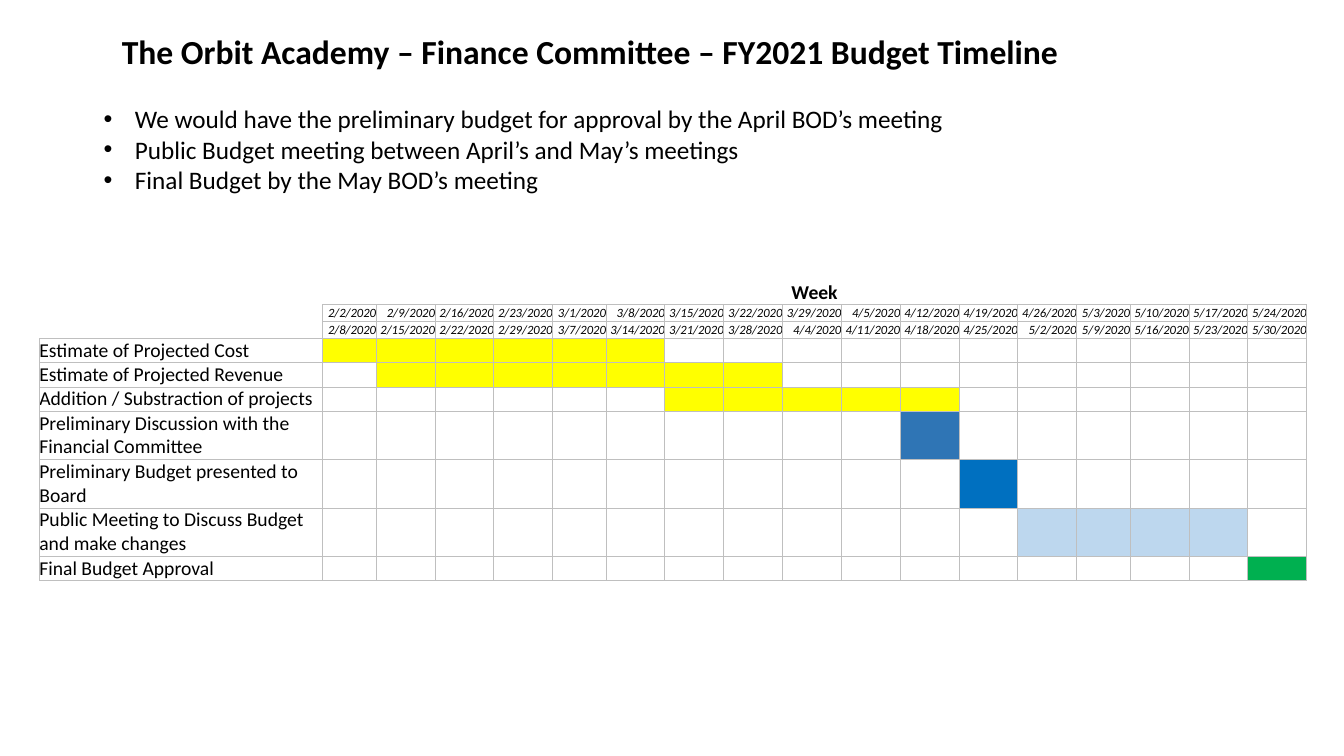
from dataclasses import dataclass

from lxml.etree import SubElement
from pptx import Presentation
from pptx.dml.color import RGBColor
from pptx.enum.text import MSO_ANCHOR, PP_ALIGN
from pptx.oxml.ns import qn
from pptx.util import Inches, Pt

TITLE = "The Orbit Academy – Finance Committee – FY2021 Budget Timeline"
BULLETS = [
    "We would have the preliminary budget for approval by the April BOD’s meeting",
    "Public Budget meeting between April’s and May’s meetings",
    "Final Budget by the May BOD’s meeting",
]
YEAR = 2020
WEEK_STARTS = ("2/2 2/9 2/16 2/23 3/1 3/8 3/15 3/22 3/29 "
               "4/5 4/12 4/19 4/26 5/3 5/10 5/17 5/24").split()
WEEK_ENDS = ("2/8 2/15 2/22 2/29 3/7 3/14 3/21 3/28 4/4 "
             "4/11 4/18 4/25 5/2 5/9 5/16 5/23 5/30").split()
# Task, first week, last week, bar colour, lines of text
TASKS = [
    ("Estimate of Projected Cost", 1, 6, "FFFF00", 1),
    ("Estimate of Projected Revenue", 2, 8, "FFFF00", 1),
    ("Addition / Substraction of projects", 7, 11, "FFFF00", 1),
    ("Preliminary Discussion with the Financial Committee", 11, 11, "2F75B5", 2),
    ("Preliminary Budget presented to Board", 12, 12, "0070C0", 2),
    ("Public Meeting to Discuss Budget and make changes", 13, 16, "BDD7EE", 2),
    ("Final Budget Approval", 17, 17, "00B050", 1),
]


@dataclass(frozen=True)
class Theme:
    font: str = "Calibri"
    text: str = "000000"
    grid: str = "BFBFBF"
    title_size: int = 24
    bullet_size: int = 18
    label_size: int = 14
    date_size: int = 9


THEME = Theme()
SLIDE_WIDTH, SLIDE_HEIGHT = 13.33, 7.5
TABLE_LEFT, TABLE_TOP, TABLE_WIDTH = 0.39, 2.78, 12.57
LABEL_WIDTH, NARROW_WIDTH = 2.81, 0.53
NARROW_WEEKS = (1, 5, 14)
LINE_HEIGHT, DATE_HEIGHT = 0.24, 0.17
HEADER_ROWS = 3
ALL_SIDES = ("L", "R", "T", "B")


def style_paragraph(paragraph, size, bold=False, italic=False):
    font = paragraph.font
    font.name, font.size = THEME.font, Pt(size)
    font.bold, font.italic = bold, italic
    font.color.rgb = RGBColor.from_string(THEME.text)


def add_text(slide, left, top, width, height, lines, size, bold=False, wrap=True):
    box = slide.shapes.add_textbox(Inches(left), Inches(top), Inches(width), Inches(height))
    frame = box.text_frame
    frame.word_wrap = wrap
    frame.text = "\n".join(lines)
    for paragraph in frame.paragraphs:
        style_paragraph(paragraph, size, bold)
    return frame


def add_bullet(paragraph):
    properties = paragraph._p.get_or_add_pPr()
    indent = Inches(0.31)
    properties.set("marL", str(indent))
    properties.set("indent", str(-indent))
    font = properties.makeelement(qn("a:buFont"), {"typeface": "Arial"})
    character = properties.makeelement(qn("a:buChar"), {"char": "•"})
    properties.insert(0, font)
    properties.insert(1, character)


def draw_borders(cell, sides):
    """Line the given sides; the borders must precede the cell's fill."""
    properties = cell._tc.get_or_add_tcPr()
    for side in ALL_SIDES:
        line = SubElement(properties, qn(f"a:ln{side}"), w=str(Pt(0.5)))
        if side in sides:
            fill = SubElement(line, qn("a:solidFill"))
            SubElement(fill, qn("a:srgbClr"), val=THEME.grid)
        else:
            SubElement(line, qn("a:noFill"))


def border_sides(row, column):
    if row == 0:
        return ("B",) if column else ()
    if column == 0 and row < HEADER_ROWS:
        return ("R", "B") if row == HEADER_ROWS - 1 else ("R",)
    return ALL_SIDES


def fill_cell(cell, row, column, text, color):
    draw_borders(cell, border_sides(row, column))
    if color:
        cell.fill.solid()
        cell.fill.fore_color.rgb = RGBColor.from_string(color)
    else:
        cell.fill.background()
    cell.margin_left = cell.margin_right = cell.margin_top = cell.margin_bottom = 0
    cell.vertical_anchor = MSO_ANCHOR.MIDDLE
    cell.text = text
    paragraph = cell.text_frame.paragraphs[0]
    is_week_title = row == 0 and column > 0
    is_date = 0 < row < HEADER_ROWS
    is_label = column == 0 and row >= HEADER_ROWS
    size = THEME.label_size if is_week_title or is_label else THEME.date_size
    style_paragraph(paragraph, size, bold=is_week_title, italic=is_date)
    if is_week_title:
        paragraph.alignment = PP_ALIGN.CENTER
    elif is_date:
        paragraph.alignment = PP_ALIGN.RIGHT


def timeline_rows():
    """Return each row as a height and a list of (text, colour) cells."""
    blanks = [("", None)] * (len(WEEK_STARTS) - 1)
    rows = [(LINE_HEIGHT, [("", None), ("Week", None)] + blanks)]
    for dates in (WEEK_STARTS, WEEK_ENDS):
        rows.append((DATE_HEIGHT, [("", None)] + [(f"{date}/{YEAR}", None) for date in dates]))
    for task, first, last, color, lines in TASKS:
        weeks = range(1, len(WEEK_STARTS) + 1)
        bar = [("", color if first <= week <= last else None) for week in weeks]
        rows.append((LINE_HEIGHT * lines, [(task, None)] + bar))
    return rows


def add_timeline(slide):
    rows = timeline_rows()
    week_count = len(WEEK_STARTS)
    height = sum(row_height for row_height, _ in rows)
    table = slide.shapes.add_table(
        len(rows), week_count + 1, Inches(TABLE_LEFT), Inches(TABLE_TOP),
        Inches(TABLE_WIDTH), Inches(height)).table
    table.first_row = table.horz_banding = False
    narrow_total = NARROW_WIDTH * len(NARROW_WEEKS)
    wide = (TABLE_WIDTH - LABEL_WIDTH - narrow_total) / (week_count - len(NARROW_WEEKS))
    table.columns[0].width = Inches(LABEL_WIDTH)
    for week in range(1, week_count + 1):
        table.columns[week].width = Inches(NARROW_WIDTH if week in NARROW_WEEKS else wide)
    for row, (row_height, cells) in enumerate(rows):
        table.rows[row].height = Inches(row_height)
        for column, (text, color) in enumerate(cells):
            fill_cell(table.cell(row, column), row, column, text, color)
    table.cell(0, 1).merge(table.cell(0, week_count))


def main():
    presentation = Presentation()
    presentation.slide_width = Inches(SLIDE_WIDTH)
    presentation.slide_height = Inches(SLIDE_HEIGHT)
    slide = presentation.slides.add_slide(presentation.slide_layouts[6])
    add_text(slide, 1.11, 0.26, 9.69, 0.5, [TITLE], THEME.title_size, bold=True, wrap=False)
    bullets = add_text(slide, 0.93, 0.98, 11.68, 1.01, BULLETS, THEME.bullet_size)
    for paragraph in bullets.paragraphs:
        add_bullet(paragraph)
    add_timeline(slide)
    presentation.save("out.pptx")


if __name__ == "__main__":
    main()
